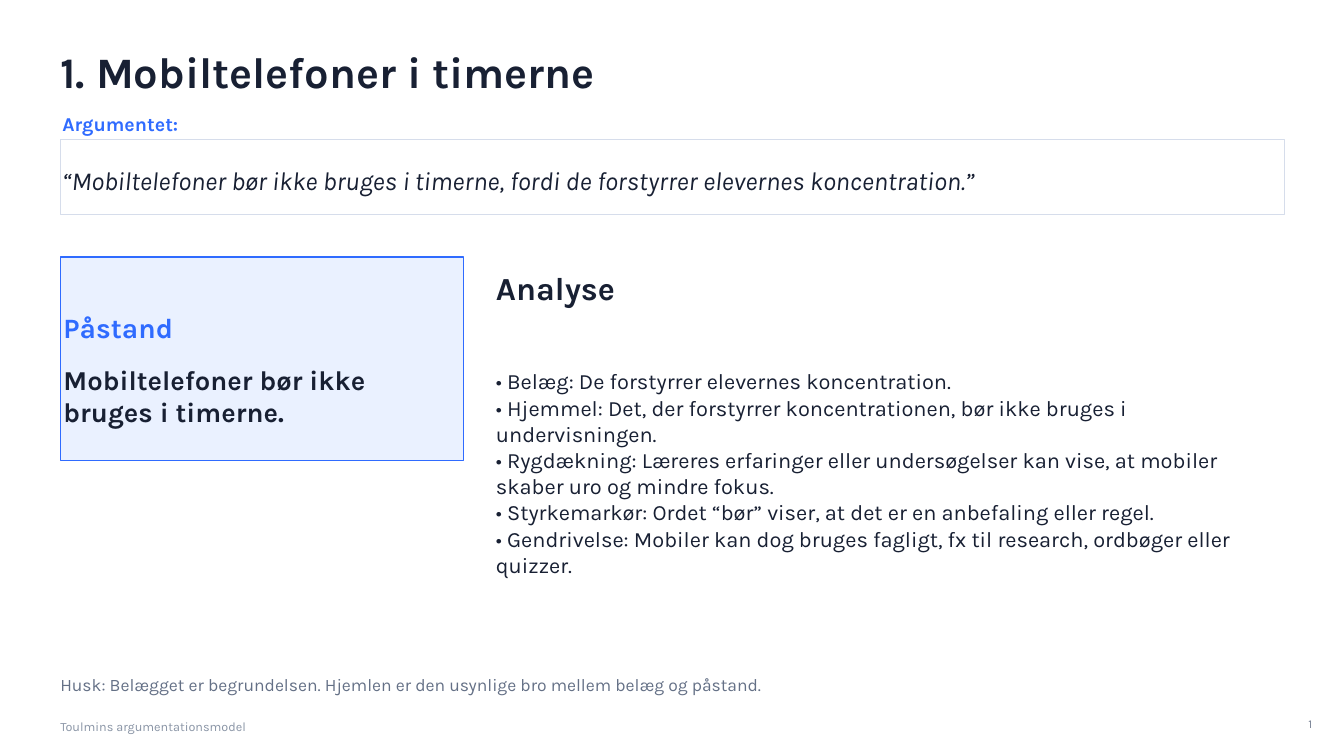
from pptx import Presentation
from pptx.dml.color import RGBColor as RGB
from pptx.enum.shapes import MSO_SHAPE as SHAPE
from pptx.enum.text import MSO_ANCHOR as ANCHOR, PP_ALIGN as ALIGN
from pptx.util import Cm, Pt

COLORS = {
    "white": "FFFFFF", "ink": "182033", "blue": "2F6BFF", "pale": "EAF1FF",
    "border": "D6DDEB", "note": "647086", "footer": "8994A5", "number": "798395",
}
LEFT = 1.52       # slide margin
ANALYSIS = 12.5   # left edge of the analysis column


def add_run(p, text, size, color, font, bold=False, italic=False):
    r = p.add_run()
    r.text = text
    r.font.name, r.font.size = font, Pt(size)
    r.font.bold, r.font.italic = bold, italic
    r.font.color.rgb = RGB.from_string(COLORS[color])


class Deck:
    font = "Karla"

    def __init__(self, prs):
        self.s = prs.slides.add_slide(prs.slide_layouts[6])
        fill = self.s.background.fill
        fill.solid()
        fill.fore_color.rgb = RGB.from_string(COLORS["white"])

    def box(self, x, y, w, h, fill, line, weight):
        sp = self.s.shapes.add_shape(SHAPE.RECTANGLE, Cm(x), Cm(y), Cm(w), Cm(h))
        sp.shadow.inherit = False
        sp.fill.solid()
        sp.fill.fore_color.rgb = RGB.from_string(COLORS[fill])
        sp.line.color.rgb = RGB.from_string(COLORS[line])
        sp.line.width = Pt(weight)

    def text(self, x, y, w, h, *lines, size, color="ink", align=ALIGN.LEFT, **style):
        tf = self.s.shapes.add_textbox(Cm(x), Cm(y), Cm(w), Cm(h)).text_frame
        tf.word_wrap = True
        tf.vertical_anchor = ANCHOR.MIDDLE
        tf.margin_left = tf.margin_right = tf.margin_top = tf.margin_bottom = 0
        for i, line in enumerate(lines):
            p = tf.add_paragraph() if i else tf.paragraphs[0]
            p.alignment = align
            add_run(p, line, size, color, self.font, **style)


def main():
    prs = Presentation()
    prs.slide_width, prs.slide_height = Cm(33.87), Cm(19.05)
    d = Deck(prs)

    # Title
    d.text(LEFT, 1.09, 22.35, 1.42, "1. Mobiltelefoner i timerne", size=31, bold=True)

    # Argument
    d.text(1.57, 2.84, 7.62, 0.56, "Argumentet:", size=14, color="blue", bold=True)
    d.box(LEFT, 3.51, 30.86, 1.9, "white", "border", 0.8)
    d.text(1.57, 4.17, 30.73, 0.76,
           "“Mobiltelefoner bør ikke bruges i timerne, fordi de forstyrrer "
           "elevernes koncentration.”", size=18.5, italic=True)

    # Claim
    d.box(LEFT, 6.48, 10.16, 5.13, "pale", "blue", 1)
    d.text(1.6, 7.75, 8.89, 1.02, "Påstand", size=20, color="blue", bold=True)
    d.text(1.6, 9.02, 9.78, 1.9, "Mobiltelefoner bør ikke", "bruges i timerne.",
           size=19.5, bold=True)

    # Analysis
    d.text(ANALYSIS, 6.68, 7.87, 1.14, "Analyse", size=23, bold=True)
    d.text(ANALYSIS, 9.02, 19.05, 5.79,
           "• Belæg: De forstyrrer elevernes koncentration.",
           "• Hjemmel: Det, der forstyrrer koncentrationen, bør ikke bruges i "
           "undervisningen.",
           "• Rygdækning: Læreres erfaringer eller undersøgelser kan vise, at "
           "mobiler skaber uro og mindre fokus.",
           "• Styrkemarkør: Ordet “bør” viser, at det er en anbefaling eller regel.",
           "• Gendrivelse: Mobiler kan dog bruges fagligt, fx til research, "
           "ordbøger eller quizzer.", size=15.6)

    # Reminder and footer
    d.text(LEFT, 16.94, 27.18, 0.64,
           "Husk: Belægget er begrundelsen. Hjemlen er den usynlige bro mellem "
           "belæg og påstand.", size=12.5, color="note")
    d.text(LEFT, 18.08, 6.86, 0.43, "Toulmins argumentationsmodel",
           size=9, color="footer")
    d.text(32.82, 17.98, 0.25, 0.51, "1", size=8.5, color="number", align=ALIGN.RIGHT)

    prs.save("out.pptx")


if __name__ == "__main__":
    main()
